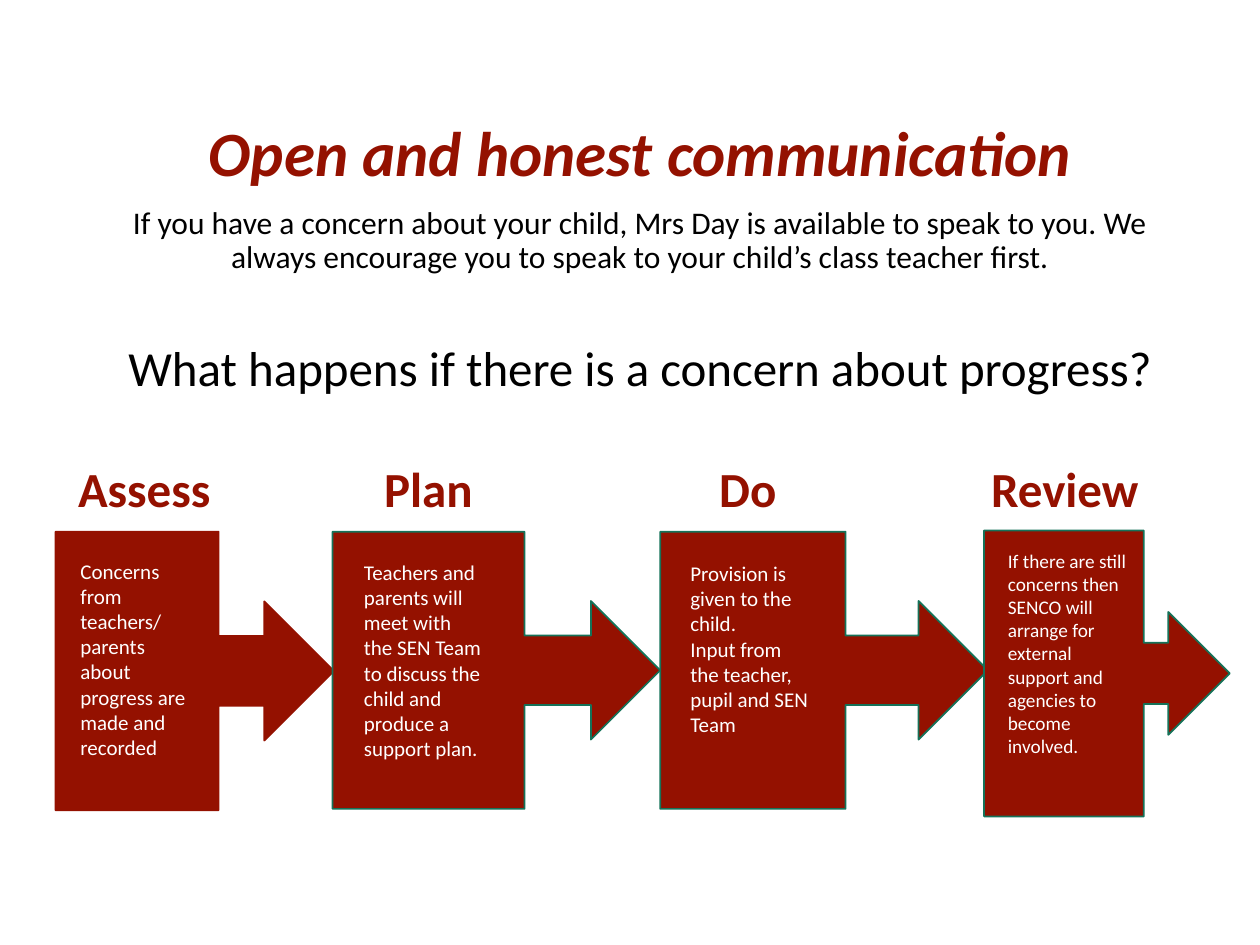
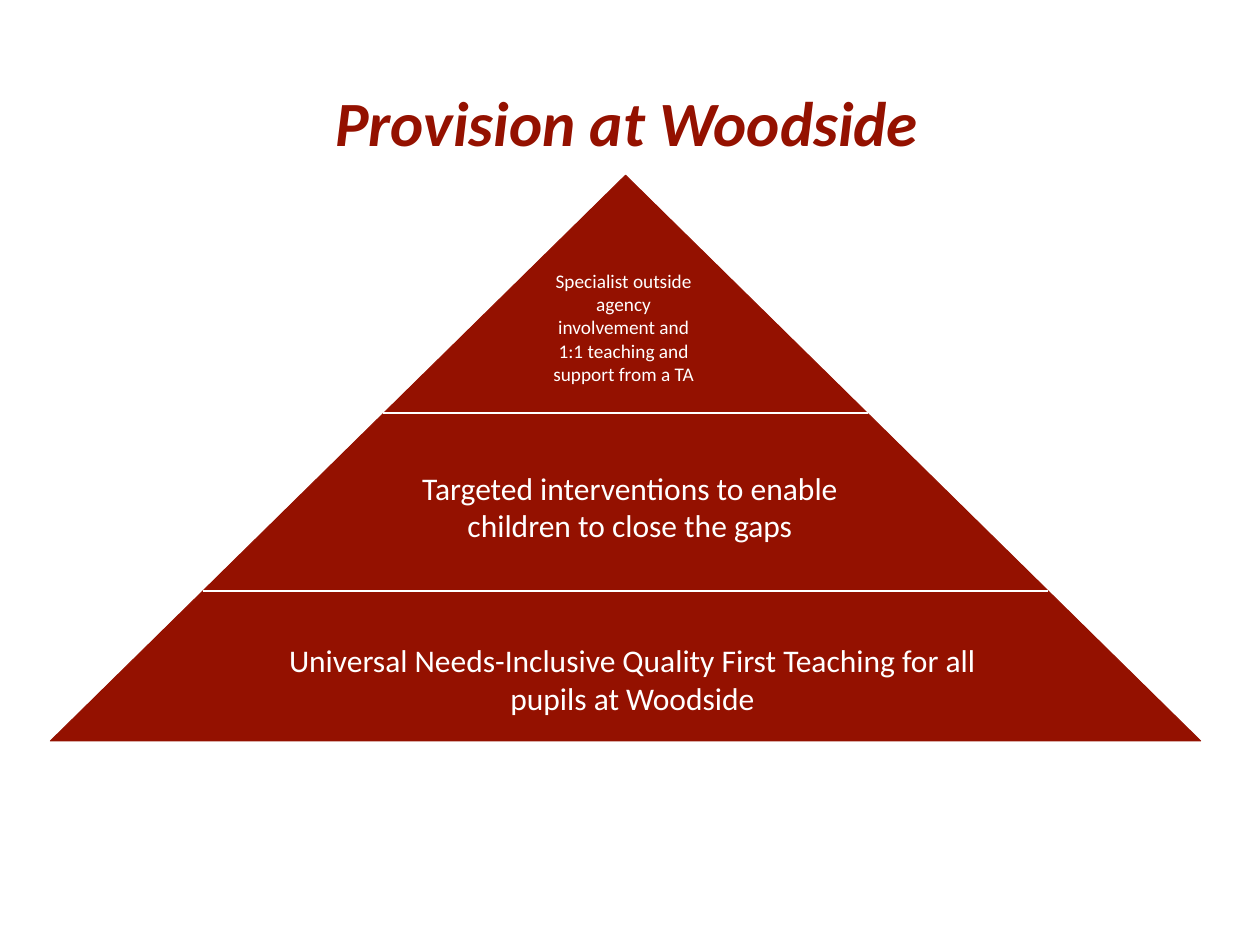
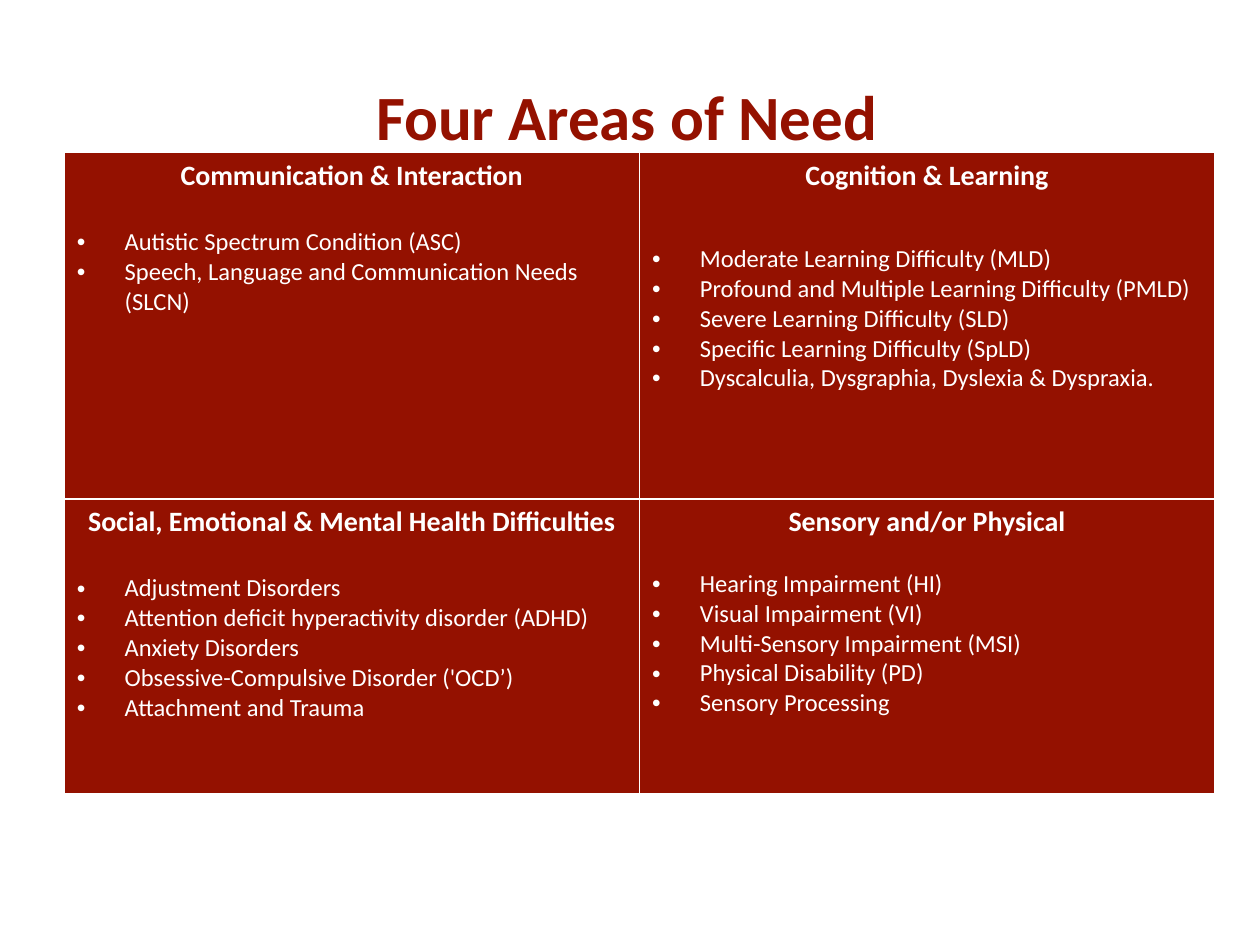
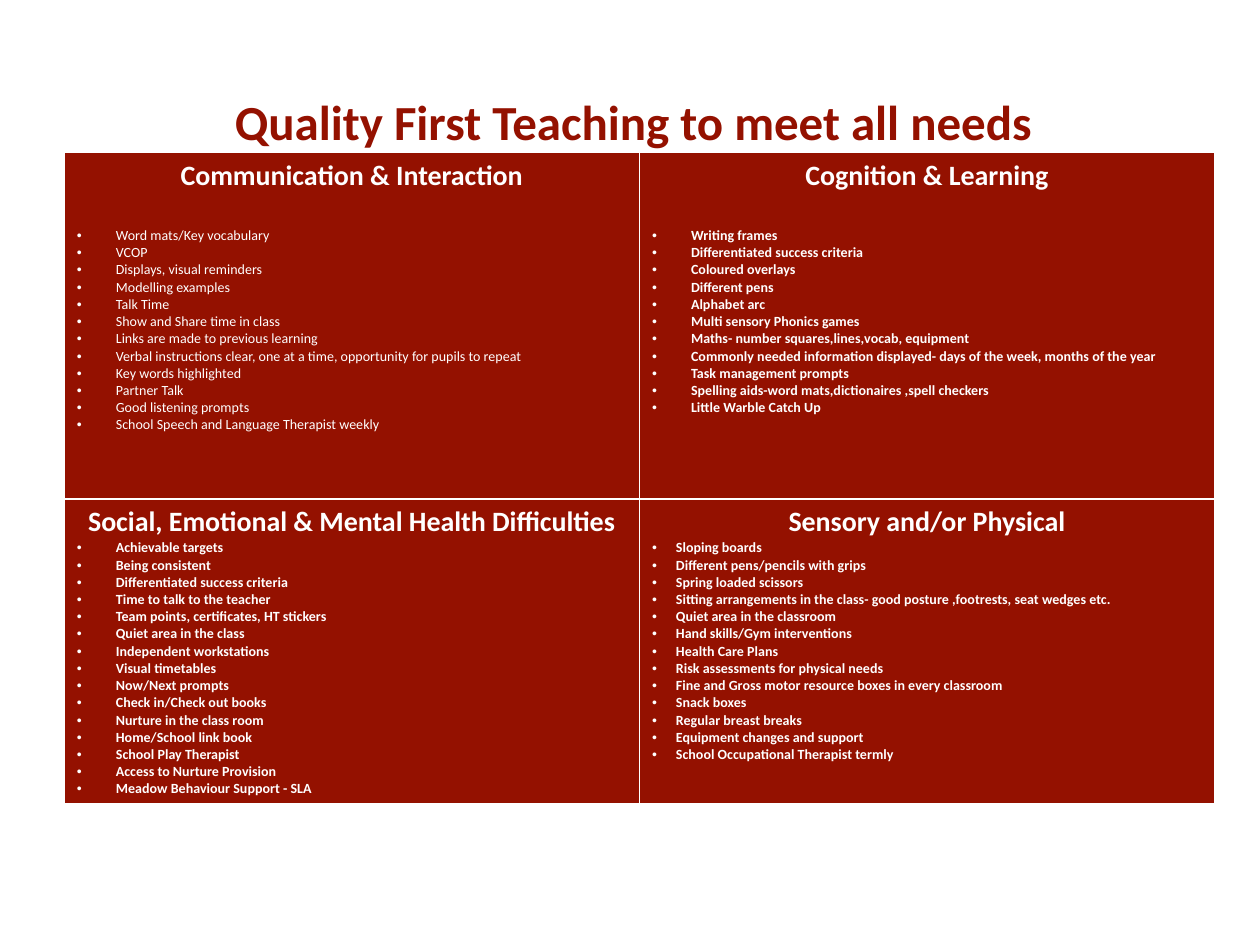
from lxml import etree
from pptx import Presentation
from pptx.dml.color import RGBColor
from pptx.enum.shapes import MSO_CONNECTOR, MSO_SHAPE
from pptx.enum.text import PP_ALIGN
from pptx.oxml.ns import qn
from pptx.util import Inches, Pt

LEFT, CENTER = PP_ALIGN.LEFT, PP_ALIGN.CENTER
CALLOUT, TRIANGLE = MSO_SHAPE.RIGHT_ARROW_CALLOUT, MSO_SHAPE.ISOSCELES_TRIANGLE
STRAIGHT = MSO_CONNECTOR.STRAIGHT

FONT = "Calibri"
BULLET_FONT = "Arial"
COLORS = {"red": "941100", "green": "157259", "white": "FFFFFF", "black": "000000"}
TITLE_BOX = (0.76, 0.68, 8.43, 5.51)

COMMUNICATION_TITLE = "Open and honest communication"
CONCERN_NOTE = (
    "If you have a concern about your child, Mrs Day is available to speak to you. "
    "We always encourage you to speak to your child’s class teacher first."
)
PROGRESS_QUESTION = "What happens if there is a concern about progress?"

# heading box: left, width; callout: box, outline, body share; note: box, size, lines
STEPS = [
    {"heading": ("Assess", 0.49, 1.31),
     "callout": ((0.44, 4.22, 2.21, 2.21), "red", 0.586),
     "note": ((0.54, 4.38, 1.1, 1.72), 12,
              ["Concerns from teachers/", "parents about progress are made and recorded"])},
    {"heading": ("Plan", 2.87, 1.06),
     "callout": ((2.64, 4.22, 2.6, 2.2), "green", 0.586),
     "note": ((2.79, 4.39, 1.15, 1.72), 12,
              ["Teachers and parents will meet with the SEN Team to discuss the child "
               "and produce a support plan."])},
    {"heading": ("Do", 5.6, 0.67),
     "callout": ((5.24, 4.22, 2.6, 2.2), "green", 0.566),
     "note": ((5.38, 4.4, 1.15, 1.51), 12,
              ["Provision is given to the child.", "Input from the teacher,",
               "pupil and SEN Team"])},
    {"heading": ("Review", 7.73, 1.44),
     "callout": ((7.81, 4.21, 1.95, 2.27), "green", 0.65),
     "note": ((7.9, 4.31, 1.15, 1.77), 11,
              ["If there are still concerns then SENCO will arrange for external support "
               "and agencies to become involved."])},
]

PROVISION_TITLE = "Provision at Woodside"
PYRAMID = (0.4, 1.39, 9.13, 4.49)
DIVIDER_HEIGHTS = [3.28, 4.69]
PROVISION_LEVELS = [
    ((4.28, 2.09, 1.34, 1.03), 11,
     "Specialist outside agency involvement and 1:1 teaching and support from a TA"),
    ((3.03, 3.67, 3.94, 0.71), 18,
     "Targeted interventions to enable children to close the gaps"),
    ((1.87, 5.04, 6.3, 0.71), 18,
     "Universal Needs-Inclusive Quality First Teaching for all pupils at Woodside"),
]

AREAS = ["Communication & Interaction", "Cognition & Learning",
         "Social, Emotional & Mental Health Difficulties", "Sensory and/or Physical"]
TABLE_BOX = (0.51, 1.21, 9.13)
NEEDS_ROWS = [2.75, 2.34]
TEACHING_ROWS = [2.75, 2.42]

# per area: gap under the heading in points, indent in inches, bold, items
NEEDS_TITLE = "Four Areas of Need"
NEEDS = [
    (19.5, 0.38, False, [
        "Autistic Spectrum Condition (ASC)",
        "Speech, Language and Communication Needs (SLCN)"]),
    (29.3, 0.38, False, [
        "Moderate Learning Difficulty (MLD)",
        "Profound and Multiple Learning Difficulty (PMLD)",
        "Severe Learning Difficulty (SLD)",
        "Specific Learning Difficulty (SpLD)",
        "Dyscalculia, Dysgraphia, Dyslexia & Dyspraxia."]),
    (19.5, 0.38, False, [
        "Adjustment Disorders",
        "Attention deficit hyperactivity disorder (ADHD)",
        "Anxiety Disorders",
        "Obsessive-Compulsive Disorder ('OCD’)",
        "Attachment and Trauma"]),
    (17, 0.38, False, [
        "Hearing Impairment (HI)",
        "Visual Impairment (VI)",
        "Multi-Sensory Impairment (MSI)",
        "Physical Disability (PD)",
        "Sensory Processing"]),
]

TEACHING_TITLE = "Quality First Teaching to meet all needs"
TEACHING = [
    (19.5, 0.31, False, [
        "Word mats/Key vocabulary",
        "VCOP",
        "Displays, visual reminders",
        "Modelling examples",
        "Talk Time",
        "Show and Share time in class",
        "Links are made to previous learning",
        "Verbal instructions clear, one at a time, opportunity for pupils to repeat",
        "Key words highlighted",
        "Partner Talk",
        "Good listening prompts",
        "School Speech and Language Therapist weekly"]),
    (19.5, 0.31, True, [
        "Writing frames",
        "Differentiated success criteria",
        "Coloured overlays",
        "Different pens",
        "Alphabet arc",
        "Multi sensory Phonics games",
        "Maths- number squares,lines,vocab, equipment",
        "Commonly needed information displayed- days of the week, months of the year",
        "Task management prompts",
        "Spelling aids-word mats,dictionaires ,spell checkers",
        "Little Warble Catch Up"]),
    (0, 0.31, True, [
        "Achievable targets",
        "Being consistent",
        "Differentiated success criteria",
        "Time to talk to the teacher",
        "Team points, certificates, HT stickers",
        "Quiet area in the class",
        "Independent workstations",
        "Visual timetables",
        "Now/Next prompts",
        "Check in/Check out books",
        "Nurture in the class room",
        "Home/School link book",
        "School Play Therapist",
        "Access to Nurture Provision",
        "Meadow Behaviour Support - SLA"]),
    (0, 0.19, True, [
        "Sloping boards",
        "Different pens/pencils with grips",
        "Spring loaded scissors",
        "Sitting arrangements in the class- good posture ,footrests, seat wedges etc.",
        "Quiet area in the classroom",
        "Hand skills/Gym interventions",
        "Health Care Plans",
        "Risk assessments for physical needs",
        "Fine and Gross motor resource boxes in every classroom",
        "Snack boxes",
        "Regular breast breaks",
        "Equipment changes and support",
        "School Occupational Therapist termly"]),
]


def rgb(color):
    return RGBColor.from_string(COLORS[color])


def inches(box):
    return [Inches(length) for length in box]


def add_paragraph(frame, text, size, color, bold=False, italic=False, align=LEFT):
    """Fill the frame's empty first paragraph, or append one."""
    paragraph = frame.paragraphs[0]
    if paragraph.runs:
        paragraph = frame.add_paragraph()
    paragraph.text = text
    paragraph.alignment = align
    font = paragraph.font
    font.name, font.size, font.bold, font.italic = FONT, Pt(size), bold, italic
    font.color.rgb = rgb(color)
    return paragraph


def add_frame(slide, box, fill=None, wrap=True):
    text_box = slide.shapes.add_textbox(*inches(box))
    if fill:
        text_box.fill.solid()
        text_box.fill.fore_color.rgb = rgb(fill)
    text_box.text_frame.word_wrap = wrap
    return text_box.text_frame


def add_title(slide, text, box=TITLE_BOX, size=36, italic=False, spacing=0.8):
    frame = add_frame(slide, box)
    title = add_paragraph(frame, text, size, "red", True, italic, CENTER)
    title.line_spacing = spacing
    title.space_before = Pt(10)
    return frame


def add_red_shape(slide, kind, box, outline, width):
    shape = slide.shapes.add_shape(kind, *inches(box))
    shape.shadow.inherit = False
    shape.fill.solid()
    shape.fill.fore_color.rgb = rgb("red")
    shape.line.color.rgb = rgb(outline)
    shape.line.width = Pt(width)
    return shape


def add_divider(slide, left, right, y):
    divider = slide.shapes.add_connector(STRAIGHT, *inches((left, y, right, y)))
    divider.line.color.rgb = rgb("white")
    divider.line.width = Pt(1)
    etree.SubElement(divider._element.spPr, qn("a:effectLst"))


def set_bullet(paragraph, indent):
    properties = paragraph._p.get_or_add_pPr()
    properties.set("marL", str(Inches(indent)))
    properties.set("indent", str(-Inches(indent)))
    bullet_font = etree.Element(qn("a:buFont"), typeface=BULLET_FONT)
    bullet = etree.Element(qn("a:buChar"), char="•")
    defaults = properties.find(qn("a:defRPr"))
    if defaults is None:
        properties.extend([bullet_font, bullet])
    else:
        defaults.addprevious(bullet_font)
        defaults.addprevious(bullet)


def style_cell(cell):
    """White one-point borders, then the red fill that must follow them."""
    properties = cell._tc.get_or_add_tcPr()
    for side in ("lnL", "lnR", "lnT", "lnB"):
        border = etree.SubElement(properties, qn(f"a:{side}"), w=str(Pt(1)))
        fill = etree.SubElement(border, qn("a:solidFill"))
        etree.SubElement(fill, qn("a:srgbClr"), val=COLORS["white"])
    cell.fill.solid()
    cell.fill.fore_color.rgb = rgb("red")


def add_area_table(slide, areas, size, row_heights):
    height = sum(row_heights)
    table = slide.shapes.add_table(2, 2, *inches((*TABLE_BOX, height))).table
    for row, row_height in zip(table.rows, row_heights):
        row.height = Inches(row_height)
    for index, (heading, area) in enumerate(zip(AREAS, areas)):
        gap, indent, bold, items = area
        cell = table.cell(*divmod(index, 2))
        style_cell(cell)
        frame = cell.text_frame
        add_paragraph(frame, heading, 16, "white", True, align=CENTER)
        for number, item in enumerate(items):
            paragraph = add_paragraph(frame, item, size, "white", bold)
            set_bullet(paragraph, indent)
            if number == 0:
                paragraph.space_before = Pt(gap)


def build_communication(slide):
    frame = add_title(slide, COMMUNICATION_TITLE, (0.75, 0.92, 8.66, 5.51),
                      italic=True, spacing=0.9)
    for text, size, gap in [(CONCERN_NOTE, 18, 10), (PROGRESS_QUESTION, 28, 39)]:
        paragraph = add_paragraph(frame, text, size, "black", align=CENTER)
        paragraph.line_spacing = 0.9
        paragraph.space_before = Pt(gap)
    for step in STEPS:
        box, outline, body_share = step["callout"]
        callout = add_red_shape(slide, CALLOUT, box, outline, 1)
        callout.adjustments[3] = body_share
    for step in STEPS:
        heading, left, width = step["heading"]
        heading_frame = add_frame(slide, (left, 3.59, width, 0.57), wrap=False)
        add_paragraph(heading_frame, heading, 28, "red", True, align=CENTER)
        box, size, lines = step["note"]
        note_frame = add_frame(slide, box)
        for line in lines:
            add_paragraph(note_frame, line, size, "white")


def build_provision(slide):
    add_title(slide, PROVISION_TITLE, italic=True, spacing=0.9)
    add_red_shape(slide, TRIANGLE, PYRAMID, "red", 0.5)
    left, top, width, height = PYRAMID
    middle = left + width / 2
    for y in DIVIDER_HEIGHTS:
        half = width / 2 * (y - top) / height
        add_divider(slide, middle - half, middle + half, y)
    for box, size, text in PROVISION_LEVELS:
        add_paragraph(add_frame(slide, box, "red"), text, size, "white", align=CENTER)


def build_needs(slide):
    add_title(slide, NEEDS_TITLE)
    add_area_table(slide, NEEDS, 14, NEEDS_ROWS)


def build_teaching(slide):
    frame = add_title(slide, TEACHING_TITLE, size=28)
    frame.margin_top, frame.margin_left = Inches(0.14), Inches(0.2)
    add_area_table(slide, TEACHING, 8, TEACHING_ROWS)


def main():
    deck = Presentation()
    deck.slide_width, deck.slide_height = Inches(10), Inches(7.5)
    blank = deck.slide_layouts[6]
    for build in (build_communication, build_provision, build_needs, build_teaching):
        build(deck.slides.add_slide(blank))
    deck.save("out.pptx")


if __name__ == "__main__":
    main()
